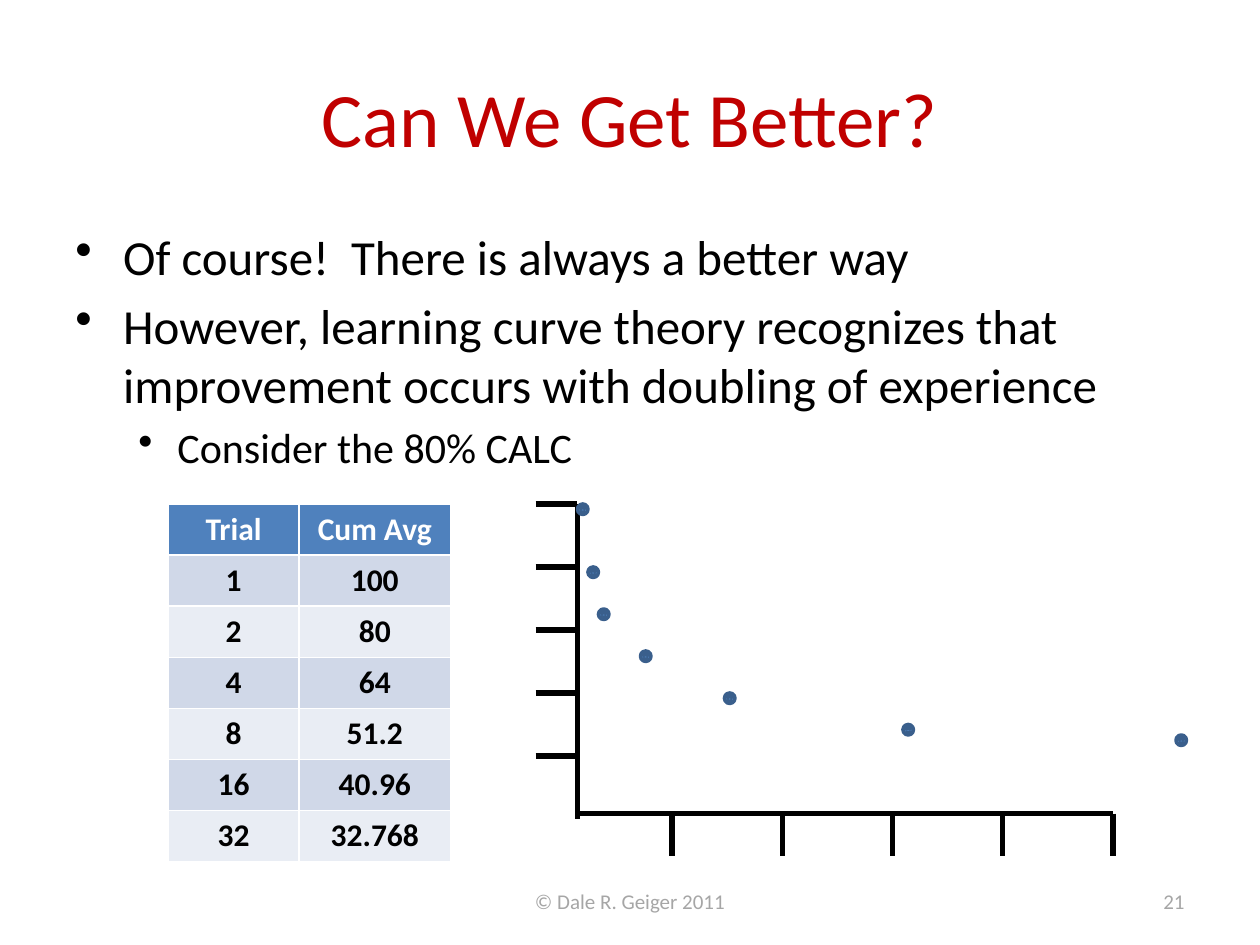
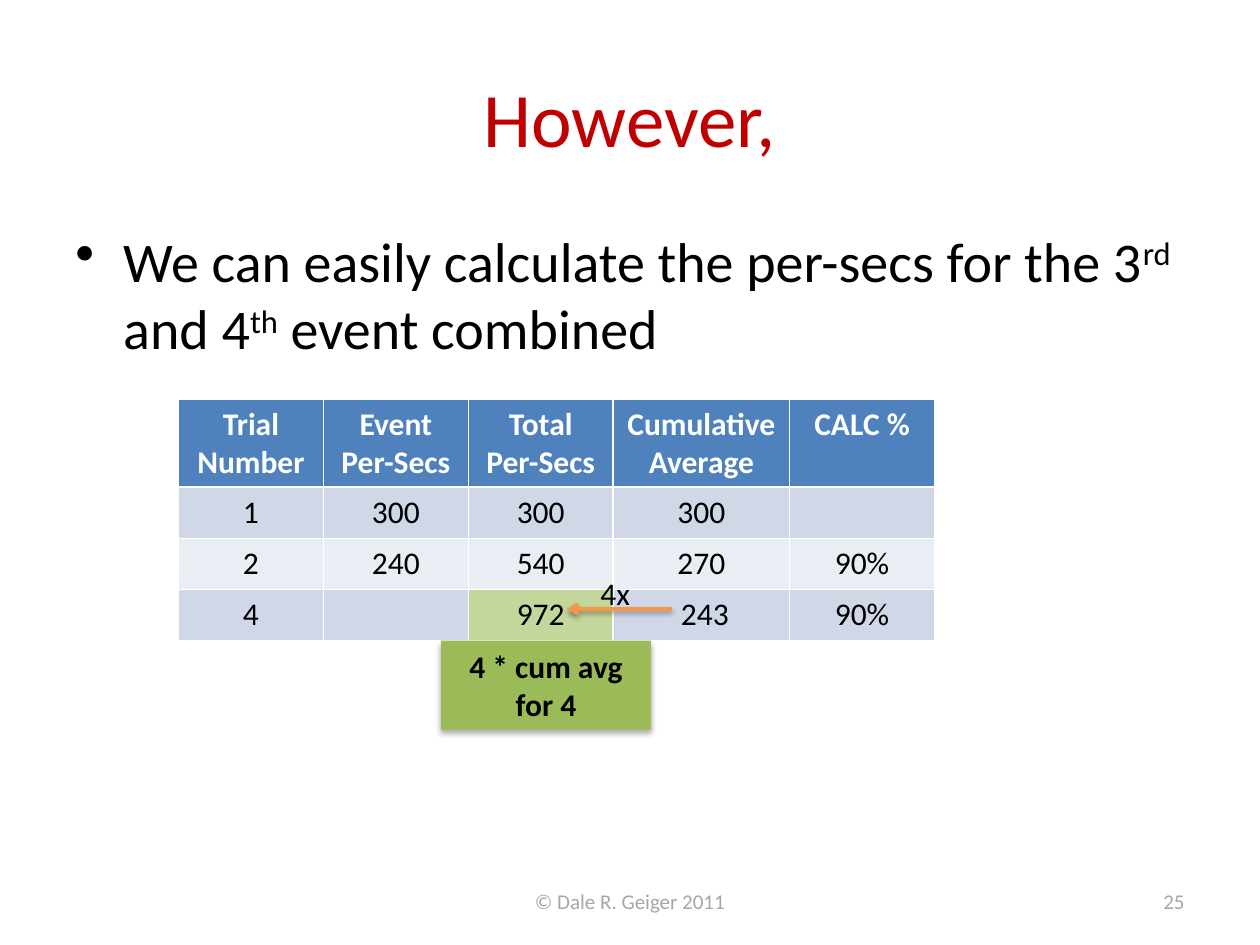
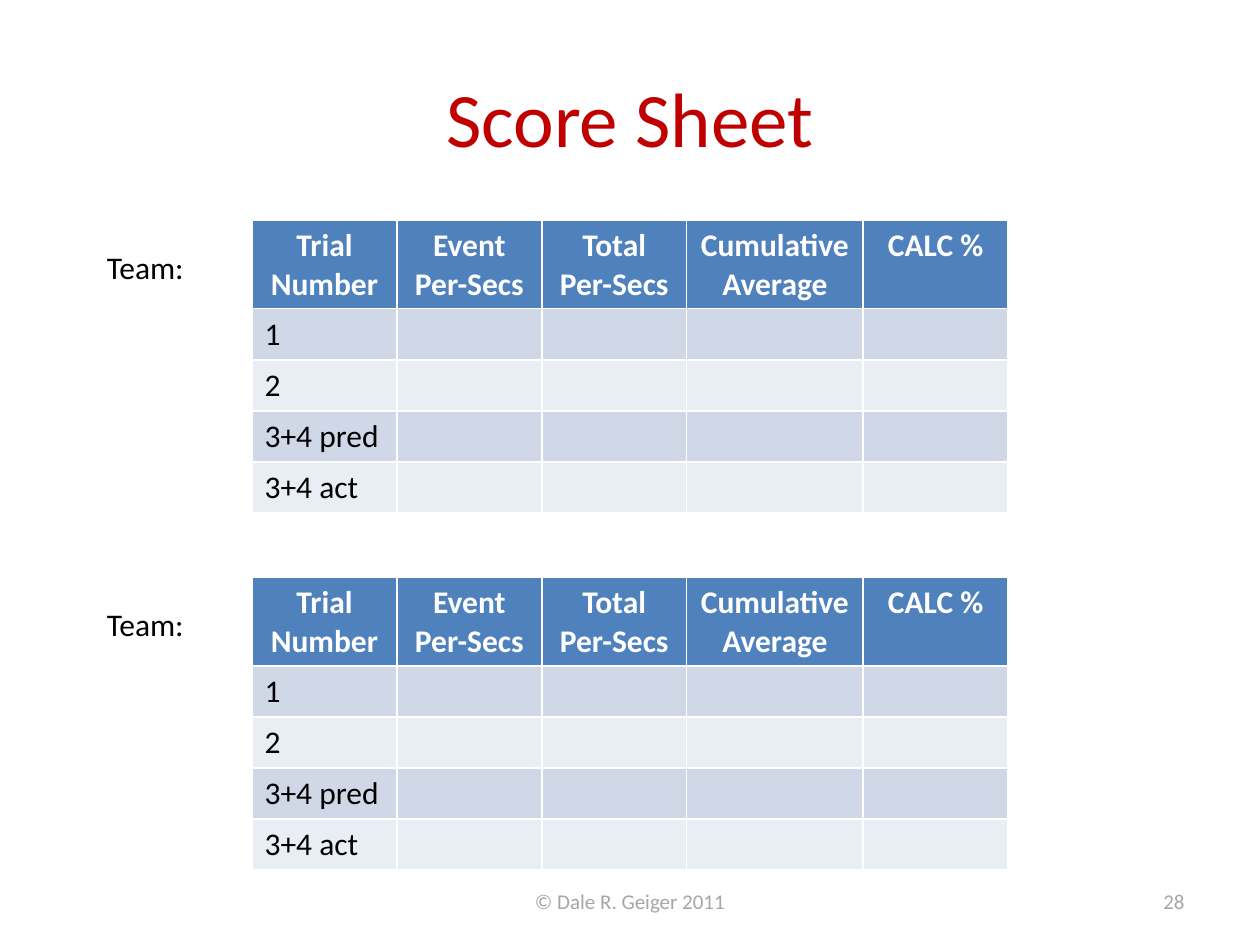
from lxml import etree
from pptx import Presentation
from pptx.dml.color import RGBColor
from pptx.enum.shapes import MSO_CONNECTOR as Connector, MSO_SHAPE as Shape
from pptx.enum.text import MSO_ANCHOR as Anchor, PP_ALIGN as Align
from pptx.oxml.ns import qn
from pptx.util import Inches, Pt

# Shared look
FONT = "Calibri"
BLACK = RGBColor(0x00, 0x00, 0x00)
WHITE = RGBColor(0xFF, 0xFF, 0xFF)
RED = RGBColor(0xC0, 0x00, 0x00)
GRAY = RGBColor(0xA6, 0xA6, 0xA6)
BLUE = RGBColor(0x4F, 0x81, 0xBD)
DARK_BLUE = RGBColor(0x3A, 0x5F, 0x8C)
BANDS = (RGBColor(0xD0, 0xD8, 0xE8), RGBColor(0xE9, 0xED, 0xF4))
GREEN = RGBColor(0x9B, 0xBB, 0x59)
LIGHT_GREEN = RGBColor(0xC3, 0xD6, 0x9B)
ORANGE = RGBColor(0xF7, 0x96, 0x46)

FOOTER = "© Dale R. Geiger 2011"
ROW_HEIGHT = 4.87
HEADER_HEIGHT = 8.4
SCORE_HEADER = ["Trial Number", "Event Per-Secs", "Total Per-Secs",
                "Cumulative Average", "CALC %"]
SCORE_COLUMNS = [13.8, 13.8, 13.8, 16.8, 13.8]


def grid(*cells):
    """Lengths on a grid of twelve cells to the inch (120 x 90 a slide)."""
    return [Inches(cell / 12) for cell in cells]


def style(paragraph, size, color=BLACK, bold=False, align=Align.LEFT):
    paragraph.alignment = align
    font = paragraph.font
    font.name, font.size, font.bold = FONT, Pt(size), bold
    font.color.rgb = color


def add_text(slide, text, box, size=18, color=BLACK, align=Align.LEFT,
             anchor=Anchor.TOP, wrap=True):
    frame = slide.shapes.add_textbox(*grid(*box)).text_frame
    frame.word_wrap = wrap
    frame.vertical_anchor = anchor
    frame.text = text
    style(frame.paragraphs[0], size, color, align=align)


def add_slide(presentation, title, number):
    """Title-only slide with the shared title, footer and number."""
    slide = presentation.slides.add_slide(presentation.slide_layouts[5])
    shape = slide.shapes.title
    shape.left, shape.top, shape.width, shape.height = grid(6, 3.6, 108, 15)
    shape.text_frame.text = title
    shape.text_frame.vertical_anchor = Anchor.MIDDLE
    style(shape.text_frame.paragraphs[0], 44, RED, align=Align.CENTER)
    add_text(slide, FOOTER, (41, 83.4, 38, 4.8), 12, GRAY, Align.CENTER, Anchor.MIDDLE)
    add_text(slide, str(number), (86, 83.4, 28, 4.8), 12, GRAY, Align.RIGHT, Anchor.MIDDLE)
    return slide


def add_bullets(slide, items):
    """Items are (size, left margin, hanging indent, runs); a run is (text, raised)."""
    frame = slide.shapes.add_textbox(*grid(6, 21, 108, 59.4)).text_frame
    frame.word_wrap = True
    for index, (size, margin, hanging, runs) in enumerate(items):
        paragraph = frame.add_paragraph() if index else frame.paragraphs[0]
        style(paragraph, size)
        paragraph.space_before = Pt(size * 0.2)
        properties = paragraph._p.get_or_add_pPr()
        properties.set("marL", str(Inches(margin)))
        properties.set("indent", str(-Inches(hanging)))
        bullet = etree.Element(qn("a:buChar"), char="•")
        properties.find(qn("a:defRPr")).addprevious(bullet)
        for text, raised in runs:
            run = paragraph.add_run()
            run.text = text
            if raised:
                run.font._element.set("baseline", "30000")


def add_table(slide, left, top, columns, rows, header_height=ROW_HEIGHT,
              bold=False, align=Align.CENTER):
    heights = [header_height] + [ROW_HEIGHT] * (len(rows) - 1)
    box = grid(left, top, sum(columns), sum(heights))
    table = slide.shapes.add_table(len(rows), len(columns), *box).table
    for column, width in zip(table.columns, grid(*columns)):
        column.width = width
    for row, height in zip(table.rows, grid(*heights)):
        row.height = height
    for r, values in enumerate(rows):
        for c, value in enumerate(values):
            cell = table.cell(r, c)
            cell.text = value
            cell.fill.solid()
            cell.fill.fore_color.rgb = BANDS[(r - 1) % 2] if r else BLUE
            style(cell.text_frame.paragraphs[0], 18, BLACK if r else WHITE,
                  bold or r == 0, align if r else Align.CENTER)
    return table


def add_line(slide, start, end, color=BLACK, width=3):
    line = slide.shapes.add_connector(Connector.STRAIGHT, *grid(*start, *end))
    line.line.color.rgb = color
    line.line.width = Pt(width)
    return line, etree.SubElement(line._element.spPr, qn("a:effectLst"))


def add_shadow(effects, opacity, blur, distance):
    shadow = etree.SubElement(effects, qn("a:outerShdw"), blurRad=str(Pt(blur)),
                              dist=str(Pt(distance)), dir="5400000", rotWithShape="0")
    color = etree.SubElement(shadow, qn("a:srgbClr"), val=str(BLACK))
    etree.SubElement(color, qn("a:alpha"), val=str(opacity * 1000))


def add_arrow(slide, start, end):
    line, effects = add_line(slide, start, end, ORANGE, 2)
    etree.SubElement(line.line._get_or_add_ln(), qn("a:tailEnd"), type="arrow")
    add_shadow(effects, 38, 3.1, 1.6)


def add_callout(slide, text, box):
    shape = slide.shapes.add_shape(Shape.RECTANGLE, *grid(*box))
    shape.fill.solid()
    shape.fill.fore_color.rgb = GREEN
    shape.line.fill.background()
    shape.shadow.inherit = False
    add_shadow(shape._element.spPr.find(qn("a:effectLst")), 32, 3.5, 2.2)
    shape.text_frame.word_wrap = True
    shape.text_frame.text = text
    style(shape.text_frame.paragraphs[0], 18, bold=True, align=Align.CENTER)


def add_learning_curve(slide):
    # Axes with five ticks each
    axis_x, axis_y = 55, 77.5
    add_line(slide, (axis_x, axis_y), (106, axis_y))
    add_line(slide, (axis_x, 48), (axis_x, 78))
    for tick in range(5):
        x, y = 64 + 10.5 * tick, 48 + 6 * tick
        add_line(slide, (x, axis_y), (x, axis_y + 4))
        add_line(slide, (axis_x - 4, y), (axis_x, y))
    # Trial points
    for x, y in [(55, 48), (56, 54), (57, 58), (61, 62), (69, 66), (86, 69), (112, 70)]:
        point = slide.shapes.add_shape(Shape.SMILEY_FACE, *grid(x, y, 1, 1))
        point.shadow.inherit = False
        point.fill.solid()
        point.fill.fore_color.rgb = BLUE
        point.line.color.rgb = DARK_BLUE
        point.line.width = Pt(2)


def build_better(presentation):
    slide = add_slide(presentation, "Can We Get Better?", 21)
    add_bullets(slide, [
        (28, 0.38, 0.38, [("Of course!  There is always a better way", False)]),
        (28, 0.38, 0.38, [("However, learning curve theory recognizes that "
                           "improvement occurs with doubling of experience", False)]),
        (24, 0.81, 0.31, [("Consider the 80% CALC", False)]),
    ])
    averages = ["100", "80", "64", "51.2", "40.96", "32.768"]
    rows = [["Trial", "Cum Avg"]]
    rows += [[str(2 ** step), average] for step, average in enumerate(averages)]
    add_table(slide, 16, 48, [12.5, 14.4], rows, bold=True)
    add_learning_curve(slide)


def build_however(presentation):
    slide = add_slide(presentation, "However,", 25)
    add_bullets(slide, [(32, 0.38, 0.38, [
        ("We can easily calculate the per-secs for the 3", False), ("rd", True),
        (" and 4", False), ("th", True), (" event combined", False)])])
    table = add_table(slide, 17, 38, SCORE_COLUMNS, [
        SCORE_HEADER,
        ["1", "300", "300", "300", ""],
        ["2", "240", "540", "270", "90%"],
        ["4", "", "972", " 243", "90%"],
    ], HEADER_HEIGHT)
    table.cell(3, 2).fill.fore_color.rgb = LIGHT_GREEN
    add_callout(slide, "4 * cum avg for 4", (42, 61, 20, 8.5))
    add_arrow(slide, (64, 58), (54, 58))
    add_text(slide, "4x", (56, 54.1, 5.3, 4.8), wrap=False)


def build_score_sheet(presentation):
    slide = add_slide(presentation, "Score Sheet", 28)
    trials = ["1", "2", "3+4 pred", "3+4 act"]
    rows = [SCORE_HEADER] + [[trial, "", "", "", ""] for trial in trials]
    for top in (21, 55):
        add_table(slide, 24, top, SCORE_COLUMNS, rows, HEADER_HEIGHT, align=Align.LEFT)
        add_text(slide, "Team:", (9, top + 2, 9.8, 4.8), wrap=False)


def main():
    presentation = Presentation()
    presentation.slide_width, presentation.slide_height = grid(120, 90)
    build_better(presentation)
    build_however(presentation)
    build_score_sheet(presentation)
    presentation.save("out.pptx")


if __name__ == "__main__":
    main()
